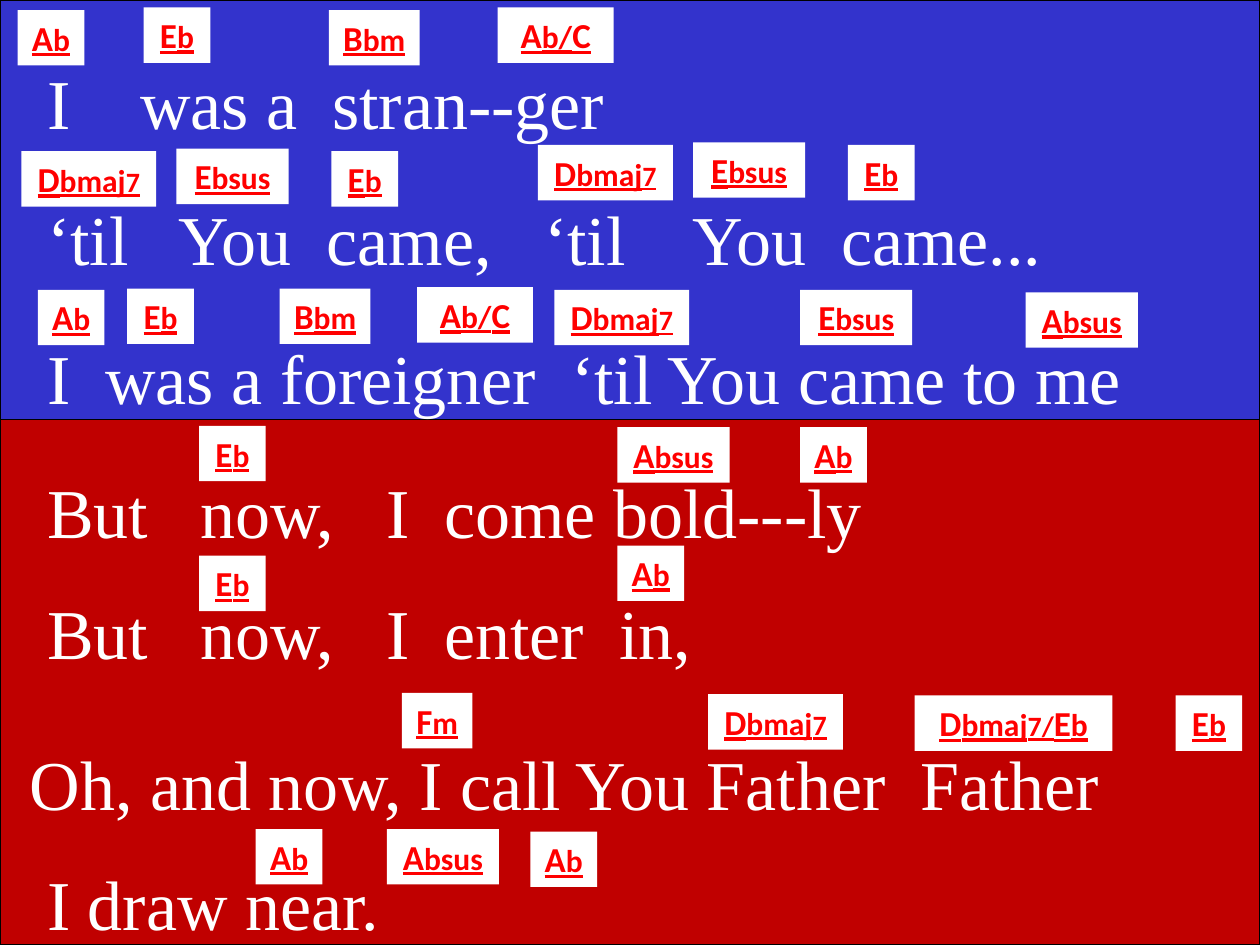
from dataclasses import dataclass
from typing import NamedTuple

from pptx import Presentation
from pptx.dml.color import RGBColor as Rgb
from pptx.enum.shapes import MSO_SHAPE as Preset
from pptx.enum.text import MSO_AUTO_SIZE as AutoSize, MSO_ANCHOR as Anchor, PP_ALIGN as Align
from pptx.shapes.autoshape import Shape
from pptx.slide import Slide
from pptx.util import Inches, Length, Pt


@dataclass(frozen=True)
class Theme:
    verse: Rgb = Rgb(0x33, 0x33, 0xCC)
    chorus: Rgb = Rgb(0xC0, 0x00, 0x00)
    border: Rgb = Rgb(0x00, 0x00, 0x00)
    paper: Rgb = Rgb(0xFF, 0xFF, 0xFF)
    chord: Rgb = Rgb(0xFF, 0x00, 0x00)
    lyric_font: str = "Times New Roman"
    chord_font: str = "Calibri"
    lyric_size: int = 40
    root_size: int = 20
    quality_size: int = 18
    number_size: int = 16


class Chord(NamedTuple):
    runs: tuple[str, ...]
    columns: float


class Mark(NamedTuple):
    chord: Chord
    column: float
    row: float


class Line(NamedTuple):
    words: str
    row: float
    marks: tuple[Mark, ...]


THEME = Theme()
COLUMNS, ROWS = 100, 75
SLIDE_WIDTH, SLIDE_HEIGHT = Inches(10), Inches(7.5)
LYRIC_ROWS, CHORD_ROWS = 7.7, 4.4

AB = Chord(("A", "b"), 5.3)
EB = Chord(("E", "b"), 5.3)
FM = Chord(("F", "m"), 5.6)
BBM = Chord(("B", "bm"), 7.2)
AB_C = Chord(("A", "b/", "C"), 9.2)
ABSUS = Chord(("A", "bsus"), 8.9)
EBSUS = Chord(("E", "bsus"), 8.9)
DBMAJ7 = Chord(("D", "bmaj", "7"), 10.7)
DBMAJ7_EB = Chord(("D", "bmaj", "7/", "E", "b"), 15.7)

SONG = (
    Line("  I    was a  stran--ger", 4.2, (
        Mark(AB, 1.4, 0.8), Mark(EB, 11.4, 0.6),
        Mark(BBM, 26.1, 0.8), Mark(AB_C, 39.5, 0.6))),
    Line("  ‘til   You  came,   ‘til    You  came...", 15, (
        Mark(DBMAJ7, 1.7, 12), Mark(EBSUS, 14, 11.8), Mark(EB, 26.3, 12),
        Mark(DBMAJ7, 42.7, 11.5), Mark(EBSUS, 55, 11.3), Mark(EB, 67.3, 11.5))),
    Line("  I  was a foreigner  ‘til You came to me", 26.1, (
        Mark(AB, 3, 23), Mark(EB, 10.1, 22.9), Mark(BBM, 22.2, 22.9),
        Mark(AB_C, 33.1, 22.8), Mark(DBMAJ7, 44, 23),
        Mark(EBSUS, 63.5, 23), Mark(ABSUS, 81.4, 23.2))),
    Line("  But   now,   I  come bold---ly", 36.7, (
        Mark(EB, 15.8, 33.8), Mark(ABSUS, 49, 33.9), Mark(AB, 63.5, 33.9))),
    Line("  But   now,   I  enter  in,", 46.3, (
        Mark(EB, 15.8, 44.1), Mark(AB, 49, 43.3))),
    Line(" Oh, and now, I call You Father  Father", 58.3, (
        Mark(FM, 31.9, 55), Mark(DBMAJ7, 56.2, 55.1),
        Mark(DBMAJ7_EB, 72.6, 55.2), Mark(EB, 93.3, 55.2))),
    Line("  I draw near.", 67.8, (
        Mark(AB, 20.3, 65.8), Mark(ABSUS, 30.7, 65.8), Mark(AB, 42.1, 66))),
)


def across(columns: float) -> Length:
    return Length(round(SLIDE_WIDTH * columns / COLUMNS))


def down(rows: float) -> Length:
    return Length(round(SLIDE_HEIGHT * rows / ROWS))


def add_block(slide: Slide, column: float, row: float, columns: float, rows: float,
              color: Rgb) -> Shape:
    block = slide.shapes.add_shape(
        Preset.RECTANGLE, across(column), down(row), across(columns), down(rows))
    block.shadow.inherit = False
    block.fill.solid()
    block.fill.fore_color.rgb = color
    block.line.fill.background()
    return block


def add_section(slide: Slide, row: float, rows: float, color: Rgb) -> None:
    """Draw a full-width, outlined band behind one part of the song."""
    section = add_block(slide, 0, row, COLUMNS, rows, color)
    section.line.color.rgb = THEME.border
    section.line.width = Pt(0.75)


def add_lyric(slide: Slide, line: Line) -> None:
    lyric = slide.shapes.add_textbox(
        0, down(line.row), across(COLUMNS), down(LYRIC_ROWS)).text_frame
    lyric.word_wrap = True
    lyric.auto_size = AutoSize.SHAPE_TO_FIT_TEXT
    words = lyric.paragraphs[0].add_run()
    words.text = line.words
    words.font.name = THEME.lyric_font
    words.font.size = Pt(THEME.lyric_size)
    words.font.color.rgb = THEME.paper


def chord_run_size(part: str) -> int:
    if part[0].isupper():
        return THEME.root_size
    return THEME.number_size if part[0].isdigit() else THEME.quality_size


def add_mark(slide: Slide, mark: Mark) -> None:
    """Place a chord label above the lyric."""
    label = add_block(slide, mark.column, mark.row, mark.chord.columns, CHORD_ROWS,
                      THEME.paper).text_frame
    label.word_wrap = False
    label.auto_size = AutoSize.SHAPE_TO_FIT_TEXT
    label.vertical_anchor = Anchor.TOP
    name = label.paragraphs[0]
    name.alignment = Align.CENTER
    for part in mark.chord.runs:
        run = name.add_run()
        run.text = part
        run.font.name = THEME.chord_font
        run.font.size = Pt(chord_run_size(part))
        run.font.bold = True
        run.font.underline = True
        run.font.color.rgb = THEME.chord


def main() -> None:
    deck = Presentation()
    deck.slide_width, deck.slide_height = SLIDE_WIDTH, SLIDE_HEIGHT
    slide = deck.slides.add_slide(deck.slide_layouts[6])
    add_section(slide, 32.5, 42.5, THEME.chorus)
    add_section(slide, 0, 33.3, THEME.verse)
    for line in SONG:
        add_lyric(slide, line)
    for line in SONG:
        for mark in line.marks:
            add_mark(slide, mark)
    deck.save("out.pptx")


if __name__ == "__main__":
    main()
